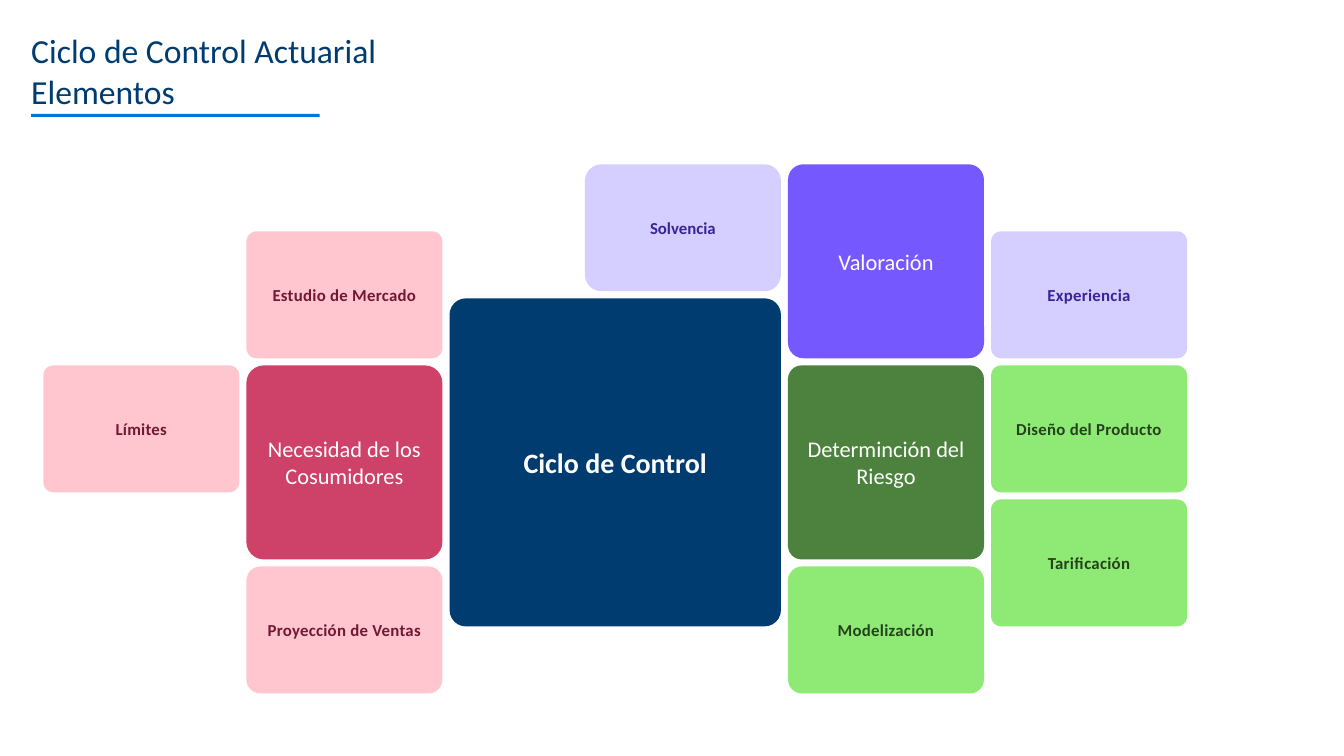
"""Builds the slide on the elements of the actuarial control cycle."""
from pptx import Presentation
from pptx import util as u
from pptx.dml.color import RGBColor
from pptx.enum import shapes, text

NAVY = RGBColor(0x00, 0x3C, 0x70)
BLUE = RGBColor(0x00, 0x77, 0xD4)
WHITE = RGBColor(0xFF, 0xFF, 0xFF)
VIOLET = RGBColor(0x76, 0x58, 0xFF)
LILAC = RGBColor(0xD4, 0xCF, 0xFF)
INDIGO = RGBColor(0x3B, 0x23, 0x98)
ROSE = RGBColor(0xCE, 0x41, 0x69)
PINK = RGBColor(0xFF, 0xC6, 0xD0)
WINE = RGBColor(0x72, 0x18, 0x33)
GREEN = RGBColor(0x4D, 0x82, 0x3E)
LIME = RGBColor(0x8E, 0xEA, 0x74)
FOREST = RGBColor(0x25, 0x42, 0x1C)

FONT = "Calibri"
TITLE = "Ciclo de Control Actuarial\vElementos"

# style: fill, ink, size, bold, space after, letter spacing
STYLES = {
    "value": (VIOLET, WHITE, 16, False, 6, 0),
    "need": (ROSE, WHITE, 16, False, 6, 0),
    "risk": (GREEN, WHITE, 16, False, 6, 0),
    "pink": (PINK, WINE, 12, True, 0, 20),
    "solvency": (LILAC, INDIGO, 12, True, 0, 0),
    "lilac": (LILAC, INDIGO, 12, True, 0, 20),
    "lime": (LIME, FOREST, 12, True, 0, 20),
    "core": (NAVY, WHITE, 20, True, 6, 0),
}

# label, style, column, row, columns wide, rows high, corner
TILES = [
    ("Valoración", "value", 11, 0, 3, 3, 0.08),
    ("Necesidad de los Cosumidores", "need", 3, 3, 3, 3, 0.09),
    ("Determinción del Riesgo", "risk", 11, 3, 3, 3, 0.07),
    ("Estudio de Mercado", "pink", 3, 1, 3, 2, 0.08),
    ("Límites", "pink", 0, 3, 3, 2, 0.08),
    ("Proyección de Ventas", "pink", 3, 6, 3, 2, 0.11),
    ("Solvencia", "solvency", 8, 0, 3, 2, 0.13),
    ("Experiencia", "lilac", 14, 1, 3, 2, 0.08),
    ("Diseño del Producto", "lime", 14, 3, 3, 2, 0.08),
    ("Tarificación", "lime", 14, 5, 3, 2, 0.08),
    ("Modelización", "lime", 11, 6, 3, 2, 0.11),
    ("Ciclo de Control", "core", 6, 2, 5, 5, 0.05),
]

LEFT, TOP, GAP = 0.43, 1.63, 0.07
COL = (9.83 - LEFT) / 14
ROW = (5.62 - TOP) / 6


def block(slide, kind, box, fill):
    item = slide.shapes.add_shape(kind, *map(u.Inches, box))
    item.shadow.inherit = False
    item.fill.solid()
    item.fill.fore_color.rgb = fill
    item.line.fill.background()
    return item


def write(frame, words, size, ink, bold, inset):
    frame.word_wrap = True
    frame.margin_left = frame.margin_right = u.Inches(inset)
    frame.margin_top = frame.margin_bottom = u.Inches(inset)
    frame.text = words
    para = frame.paragraphs[0]
    for run in para.runs:
        run.font.name = FONT
        run.font.size = u.Pt(size)
        run.font.bold = bold
        run.font.color.rgb = ink
    return para


def tile(slide, label, style, col, row, wide, high, corner):
    fill, ink, size, bold, after, track = STYLES[style]
    box = (LEFT + col * COL, TOP + row * ROW, wide * COL - GAP, high * ROW - GAP)
    item = block(slide, shapes.MSO_SHAPE.ROUNDED_RECTANGLE, box, fill)
    item.adjustments[0] = corner
    frame = item.text_frame
    frame.vertical_anchor = text.MSO_ANCHOR.MIDDLE
    para = write(frame, label, size, ink, bold, 0.1)
    para.alignment = text.PP_ALIGN.CENTER
    para.space_after = u.Pt(after)
    if track:
        for run in para.runs:
            run.font._element.set("spc", str(track))


def main():
    deck = Presentation()
    deck.slide_width, deck.slide_height = u.Inches(13.33), u.Inches(7.5)
    slide = deck.slides.add_slide(deck.slide_layouts[6])
    block(slide, shapes.MSO_SHAPE.RECTANGLE, (0.31, 1.13, 2.86, 0.03), BLUE)
    head = slide.shapes.add_textbox(*map(u.Inches, (0.31, 0.3, 12.7, 0.67)))
    write(head.text_frame, TITLE, 24, NAVY, False, 0)
    for item in TILES:
        tile(slide, *item)
    deck.save("out.pptx")


if __name__ == "__main__":
    main()
